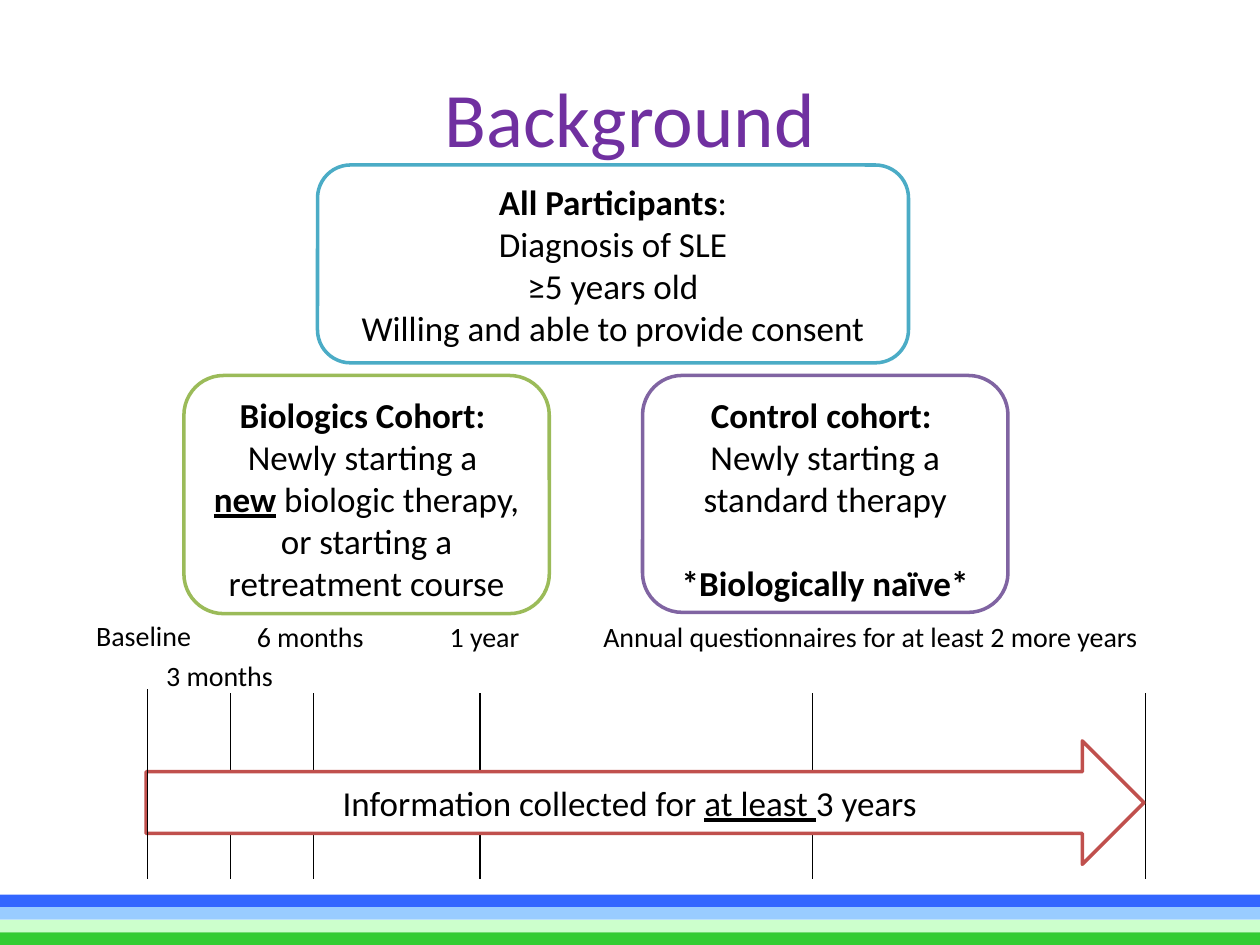
from lxml.etree import SubElement
from pptx import Presentation
from pptx.dml.color import RGBColor
from pptx.enum.shapes import MSO_CONNECTOR, MSO_SHAPE
from pptx.enum.text import MSO_ANCHOR, PP_ALIGN
from pptx.oxml.ns import qn
from pptx.util import Inches, Pt

FONT = "Calibri"
BLACK = "000000"
WHITE = "FFFFFF"


def rgb(value):
    return RGBColor.from_string(value)


def add_box(s, kind, box, fill, line=None):
    sp = s.shapes.add_shape(kind, *map(Inches, box))
    sp.shadow.inherit = False
    sp.fill.solid()
    sp.fill.fore_color.rgb = rgb(fill)
    if line:
        sp.line.color.rgb = rgb(line)
        sp.line.width = Pt(2)
    else:
        sp.line.fill.background()
    return sp


def write(tf, paragraphs, size, align=PP_ALIGN.CENTER, color=BLACK):
    tf.word_wrap = True
    for i, runs in enumerate(paragraphs):
        p = tf.add_paragraph() if i else tf.paragraphs[0]
        p.alignment = align
        p.font.name = FONT
        p.font.size = Pt(size)
        p.font.color.rgb = rgb(color)
        for text, style in runs:
            r = p.add_run()
            r.text = text
            if "b" in style:
                r.font.bold = True
            if "u" in style:
                r.font.underline = True


def add_title(s, box, text):
    title = s.shapes.title
    title.left, title.top, title.width, title.height = map(Inches, box)
    title.text_frame.vertical_anchor = MSO_ANCHOR.MIDDLE
    write(title.text_frame, [[(text, "")]], 44, color="7030A0")


def add_stripes(s, box, colors):
    left, top, width, height = box
    step = height / len(colors)
    for i, color in enumerate(colors):
        add_box(s, MSO_SHAPE.RECTANGLE, (left, top + i * step, width, step), color)


def add_card(s, box, line, paragraphs):
    sp = add_box(s, MSO_SHAPE.ROUNDED_RECTANGLE, box, WHITE, line)
    sp.text_frame.vertical_anchor = MSO_ANCHOR.TOP
    write(sp.text_frame, paragraphs, 20)
    return sp


def add_tick(s, x, top, bottom):
    line = s.shapes.add_connector(
        MSO_CONNECTOR.STRAIGHT, Inches(x), Inches(top), Inches(x), Inches(bottom))
    line.line.color.rgb = rgb(BLACK)
    line.line.width = Pt(0.75)
    SubElement(line._element.spPr, qn("a:effectLst"))


def add_label(s, box, text, align):
    tb = s.shapes.add_textbox(*map(Inches, box))
    write(tb.text_frame, [[(text, "")]], 16, align)


def add_timeline(s, box):
    left, top, width, height = box
    bottom = top + height
    per_month = width / 36
    for month in (3, 6, 12, 24, 36):
        add_tick(s, left + month * per_month, top + 0.64, bottom)
    arrow = add_box(s, MSO_SHAPE.RIGHT_ARROW,
                    (left - 0.01, top + 1.02, width, 0.98), WHITE, "C0504D")
    arrow.text_frame.vertical_anchor = MSO_ANCHOR.MIDDLE
    write(arrow.text_frame, [[("Information collected for ", ""),
                              ("at least ", "u"), ("3 years", "")]], 20)
    add_tick(s, left, top + 0.61, bottom)
    labels = [
        ("Baseline", -0.58, 0, 1.1, PP_ALIGN.CENTER),
        ("3 months", 0.05, 0.32, 1.2, PP_ALIGN.LEFT),
        ("6 months", 0.77, 0.01, 1.17, PP_ALIGN.LEFT),
        ("1 year", 2.3, 0.01, 0.99, PP_ALIGN.LEFT),
        ("Annual questionnaires for at least 2 more years", 3.52, 0.01, 5.05, PP_ALIGN.LEFT),
    ]
    for text, dx, dy, label_width, align in labels:
        add_label(s, (left + dx, top + dy, label_width, 0.37), text, align)


def main():
    prs = Presentation()
    prs.slide_width, prs.slide_height = Inches(10), Inches(7.5)
    s = prs.slides.add_slide(prs.slide_layouts[5])
    add_stripes(s, (0, 7.1, 10, 0.4), ["3366FF", "99CCFF", "CCFFCC", "33CC33"])
    add_title(s, (0.5, 0.3, 9, 1.25), "Background")
    add_timeline(s, (1.17, 4.86, 7.92, 2.12))
    add_card(s, (1.46, 2.98, 2.9, 1.89), "9BBB59", [
        [("Biologics Cohort: ", "b")],
        [("Newly starting a ", "")],
        [("new", "bu"), (" biologic therapy, or starting a retreatment course", "")],
    ])
    control = add_card(s, (5.1, 2.98, 2.9, 1.88), "8064A2", [
        [("Control cohort: ", "b")],
        [("Newly starting a standard therapy", "")],
        [("*Biologically naïve*", "b")],
    ])
    control.text_frame.paragraphs[-1].space_before = Pt(24)
    add_card(s, (2.52, 1.31, 4.69, 1.57), "4BACC6", [
        [("All Participants", "b"), (":", "")],
        [("Diagnosis of SLE", "")],
        [("≥5 years old", "")],
        [("Willing and able to provide consent", "")],
    ])
    prs.save("out.pptx")


if __name__ == "__main__":
    main()
